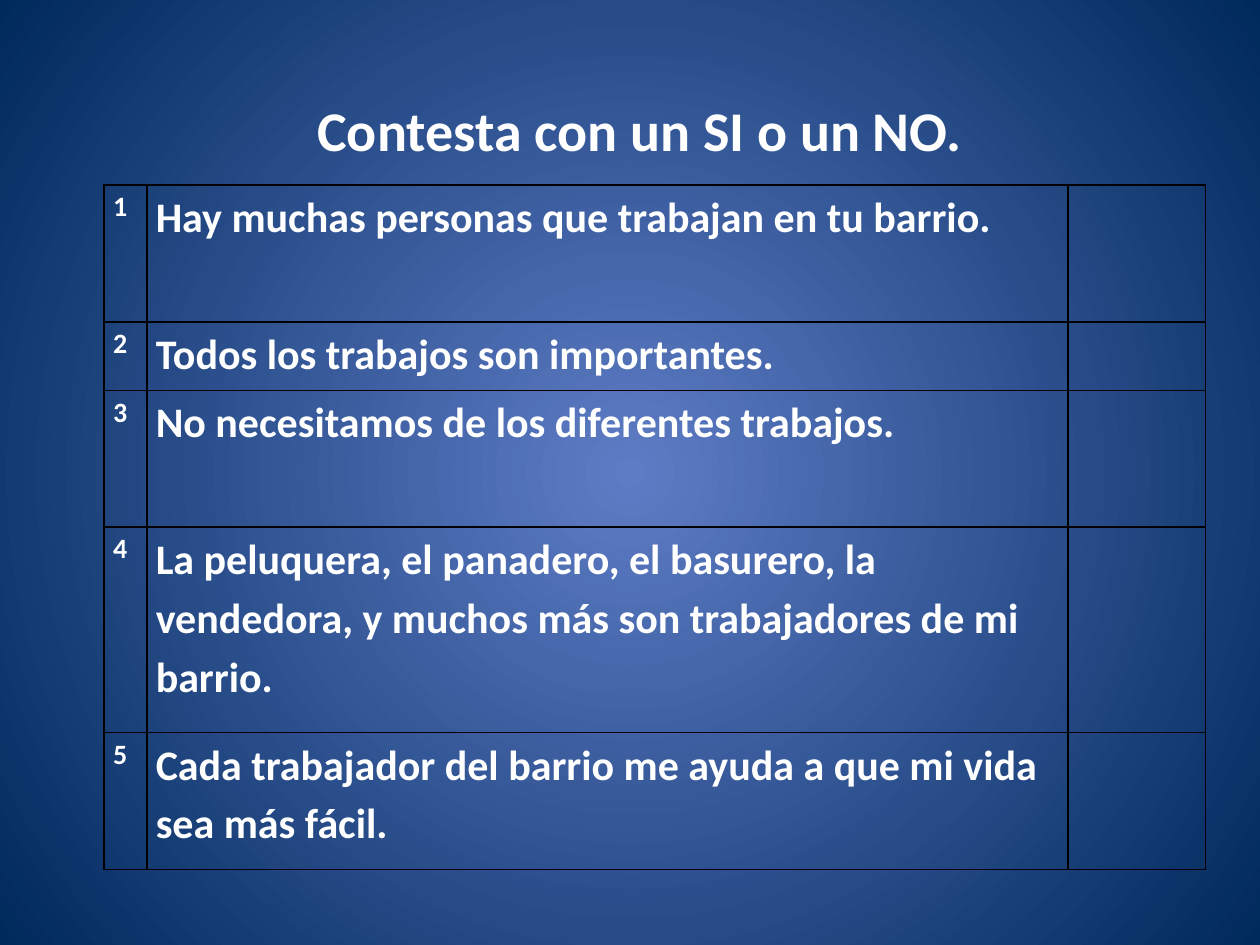
"""Build a yes-or-no quiz slide about the jobs in a neighbourhood."""
from dataclasses import dataclass

from lxml import etree
from pptx import Presentation
from pptx.dml.color import RGBColor
from pptx.enum.text import MSO_ANCHOR, PP_ALIGN
from pptx.oxml.ns import qn
from pptx.util import Cm, Pt

CENTER = PP_ALIGN.CENTER
MIDDLE, TOP = MSO_ANCHOR.MIDDLE, MSO_ANCHOR.TOP
WHITE = RGBColor(0xFF, 0xFF, 0xFF)
BLACK = RGBColor(0x00, 0x00, 0x00)
GLOW = RGBColor(0x5E, 0x7C, 0xC5)
NAVY = RGBColor(0x00, 0x29, 0x5C)
FONT = {"name": "Calibri", "bold": True}
CELL = {"margin_left": Cm(0.18), "margin_right": Cm(0.18), "margin_top": 0,
        "margin_bottom": 0, "vertical_anchor": TOP}
COL_WIDTHS = (0.86, 18.57, 2.77)
LINE_HEIGHT = 1.38


@dataclass(frozen=True)
class Statement:
    text: str
    lines: int


STATEMENTS = (
    Statement("Hay muchas personas que trabajan en tu barrio.", 2),
    Statement("Todos los trabajos son importantes.", 1),
    Statement("No necesitamos de los diferentes trabajos.", 2),
    Statement("La peluquera, el panadero, el basurero, la vendedora, "
              "y muchos más son trabajadores de mi barrio.", 3),
    Statement("Cada trabajador del barrio me ayuda a que mi vida sea más fácil.", 2),
)


def apply(obj, values: dict) -> None:
    for name, value in values.items():
        setattr(obj, name, value)


def write(p, text: str, size: int) -> None:
    r = p.add_run()
    r.text = text
    apply(r.font, FONT | {"size": Pt(size)})
    r.font.color.rgb = WHITE


def set_background(slide) -> None:
    fill = slide.background.fill
    fill.gradient()
    for stop, color in zip(fill.gradient_stops, (GLOW, NAVY)):
        stop.color.rgb = color
    grad = slide._element.find(".//" + qn("a:gradFill"))
    grad.remove(grad.find(qn("a:lin")))
    path = etree.SubElement(grad, qn("a:path"), path="circle")
    etree.SubElement(path, qn("a:fillToRect"), {side: "50000" for side in "ltrb"})


def add_title(slide, text: str) -> None:
    sp = slide.shapes.title
    apply(sp, {"left": Cm(3.7), "top": Cm(1.8), "width": Cm(18.4), "height": Cm(1.62)})
    tf = sp.text_frame
    apply(tf, {"word_wrap": True, "vertical_anchor": MIDDLE})
    p = tf.paragraphs[0]
    p.alignment = CENTER
    write(p, text, 32)


def style_cell(cell) -> None:
    apply(cell, CELL)
    tcPr = cell._tc.get_or_add_tcPr()
    for side in "LRTB":
        ln = etree.SubElement(tcPr, qn(f"a:ln{side}"), w=str(Pt(1)))
        solid = etree.SubElement(ln, qn("a:solidFill"))
        etree.SubElement(solid, qn("a:srgbClr"), val=str(BLACK))
    cell.fill.background()


def add_quiz(slide, statements: tuple[Statement, ...]) -> None:
    height = LINE_HEIGHT * sum(s.lines for s in statements)
    table = slide.shapes.add_table(len(statements), len(COL_WIDTHS), Cm(2.1), Cm(3.73),
                                   Cm(sum(COL_WIDTHS)), Cm(height)).table
    apply(table, {"first_row": False, "horz_banding": False})
    for col, width in zip(table.columns, COL_WIDTHS):
        col.width = Cm(width)
    for cell in table.iter_cells():
        style_cell(cell)
    for i, statement in enumerate(statements):
        table.rows[i].height = Cm(LINE_HEIGHT * statement.lines)
        for j, (text, size) in enumerate(((str(i + 1), 16), (statement.text, 24))):
            p = table.cell(i, j).text_frame.paragraphs[0]
            p.line_spacing = 1.15
            write(p, text, size)


def main() -> None:
    prs = Presentation()
    prs.slide_width, prs.slide_height = Cm(25.4), Cm(19.05)
    slide = prs.slides.add_slide(prs.slide_layouts.get_by_name("Title Only"))
    set_background(slide)
    add_title(slide, "Contesta con un SI o un NO.")
    add_quiz(slide, STATEMENTS)
    prs.save("out.pptx")


if __name__ == "__main__":
    main()
